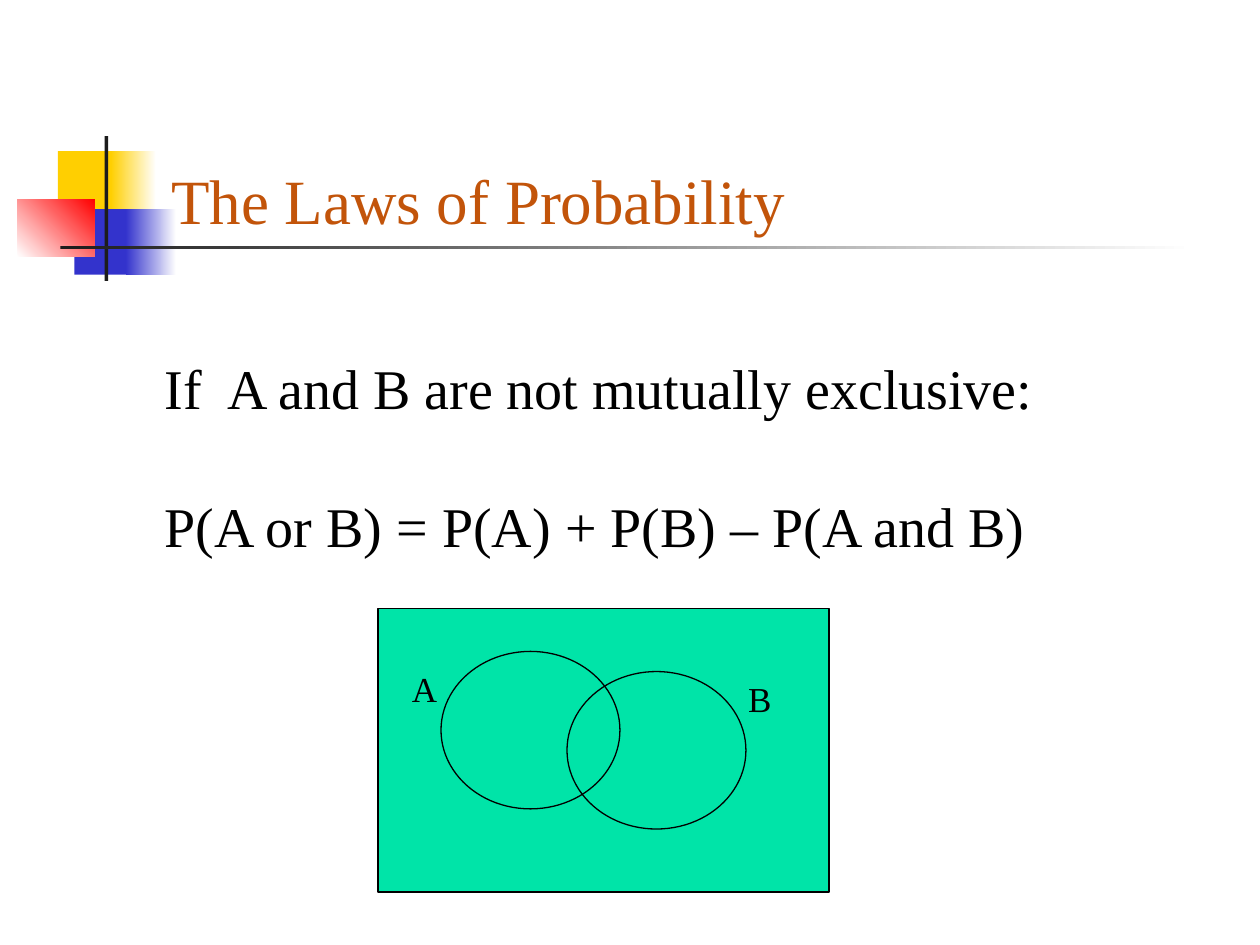
from dataclasses import dataclass

from pptx import Presentation
from pptx.dml.color import RGBColor
from pptx.enum.shapes import MSO_SHAPE
from pptx.enum.text import MSO_ANCHOR, PP_ALIGN
from pptx.util import Inches, Pt


@dataclass(frozen=True)
class Theme:
    font: str = "Times New Roman"
    title_size: int = 36
    body_size: int = 32
    label_size: int = 20
    formula_gap: int = 40
    outline_width: float = 0.75
    title: str = "C2540A"
    ink: str = "000000"
    paper: str = "FFFFFF"
    yellow: str = "FFCF01"
    blue: str = "3333CC"
    red: str = "FF0000"
    bar: str = "1C1C1C"
    sample_space: str = "00E4A8"


THEME = Theme()


def add_figure(slide, kind, box, fill=None, outlined=False, angle=0):
    """Add a shape; fill is None, one colour or a pair of gradient colours."""
    figure = slide.shapes.add_shape(kind, *map(Inches, box))
    figure.shadow.inherit = False
    if fill is None:
        figure.fill.background()
    elif isinstance(fill, tuple):
        figure.fill.gradient()
        figure.fill.gradient_angle = angle
        for stop, color in zip(figure.fill.gradient_stops, fill):
            stop.color.rgb = RGBColor.from_string(color)
    else:
        figure.fill.solid()
        figure.fill.fore_color.rgb = RGBColor.from_string(fill)
    if outlined:
        figure.line.color.rgb = RGBColor.from_string(THEME.ink)
        figure.line.width = Pt(THEME.outline_width)
    else:
        figure.line.fill.background()


def add_text(slide, box, lines, size, color=THEME.ink, align=PP_ALIGN.LEFT,
             anchor=MSO_ANCHOR.TOP, wrap=True, gap=0):
    frame = slide.shapes.add_textbox(*map(Inches, box)).text_frame
    frame.word_wrap = wrap
    frame.vertical_anchor = anchor
    frame.text = "\n".join(lines)
    for index, paragraph in enumerate(frame.paragraphs):
        paragraph.alignment = align
        paragraph.space_before = Pt(gap if index else 0)
        for run in paragraph.runs:
            run.font.name = THEME.font
            run.font.size = Pt(size)
            run.font.color.rgb = RGBColor.from_string(color)


def add_ornament(slide, left, top):
    """Overlapping colour blocks crossed by a vertical bar and a fading rule."""
    blocks = [
        ((0.32, 0.12, 0.48, 0.52), THEME.yellow, 0),
        ((0.74, 0.12, 0.36, 0.52), (THEME.yellow, THEME.paper), 0),
        ((0.45, 0.58, 0.46, 0.52), THEME.blue, 0),
        ((0.86, 0.58, 0.40, 0.52), (THEME.blue, THEME.paper), 0),
        ((0, 0.50, 0.61, 0.46), (THEME.paper, THEME.red), 45),
        ((0.69, 0, 0.03, 1.15), THEME.bar, 0),
        ((0.34, 0.87, 9, 0.03), (THEME.bar, THEME.paper), 0),
    ]
    for (x, y, width, height), fill, angle in blocks:
        add_figure(slide, MSO_SHAPE.RECTANGLE,
                   (left + x, top + y, width, height), fill, angle=angle)


def add_venn_diagram(slide, left, top, width, height):
    add_figure(slide, MSO_SHAPE.RECTANGLE, (left, top, width, height),
               THEME.sample_space, outlined=True)
    for x, y in ((0.5, 0.34), (1.5, 0.5)):
        add_figure(slide, MSO_SHAPE.OVAL, (left + x, top + y, 1.42, 1.25),
                   outlined=True)
    for event, x, y in (("A", 0.17, 0.42), ("B", 2.83, 0.5)):
        add_text(slide, (left + x, top + y, 0.4, 0.43), [event],
                 THEME.label_size, align=PP_ALIGN.CENTER, wrap=False)


def main():
    deck = Presentation()
    deck.slide_width, deck.slide_height = Inches(10), Inches(7.5)
    slide = deck.slides.add_slide(deck.slide_layouts[6])
    add_ornament(slide, 0.14, 1.08)
    add_text(slide, (1.26, 0.68, 8.52, 1.25), ["The Laws of Probability"],
             THEME.title_size, THEME.title, anchor=MSO_ANCHOR.BOTTOM)
    add_text(slide, (1.21, 2.76, 7.5, 1.7),
             ["If  A and B are not mutually exclusive:",
              "P(A or B) = P(A) + P(B) – P(A and B)"],
             THEME.body_size, gap=THEME.formula_gap)
    add_venn_diagram(slide, 3, 4.83, 3.58, 2.25)
    deck.save("out.pptx")


if __name__ == "__main__":
    main()
